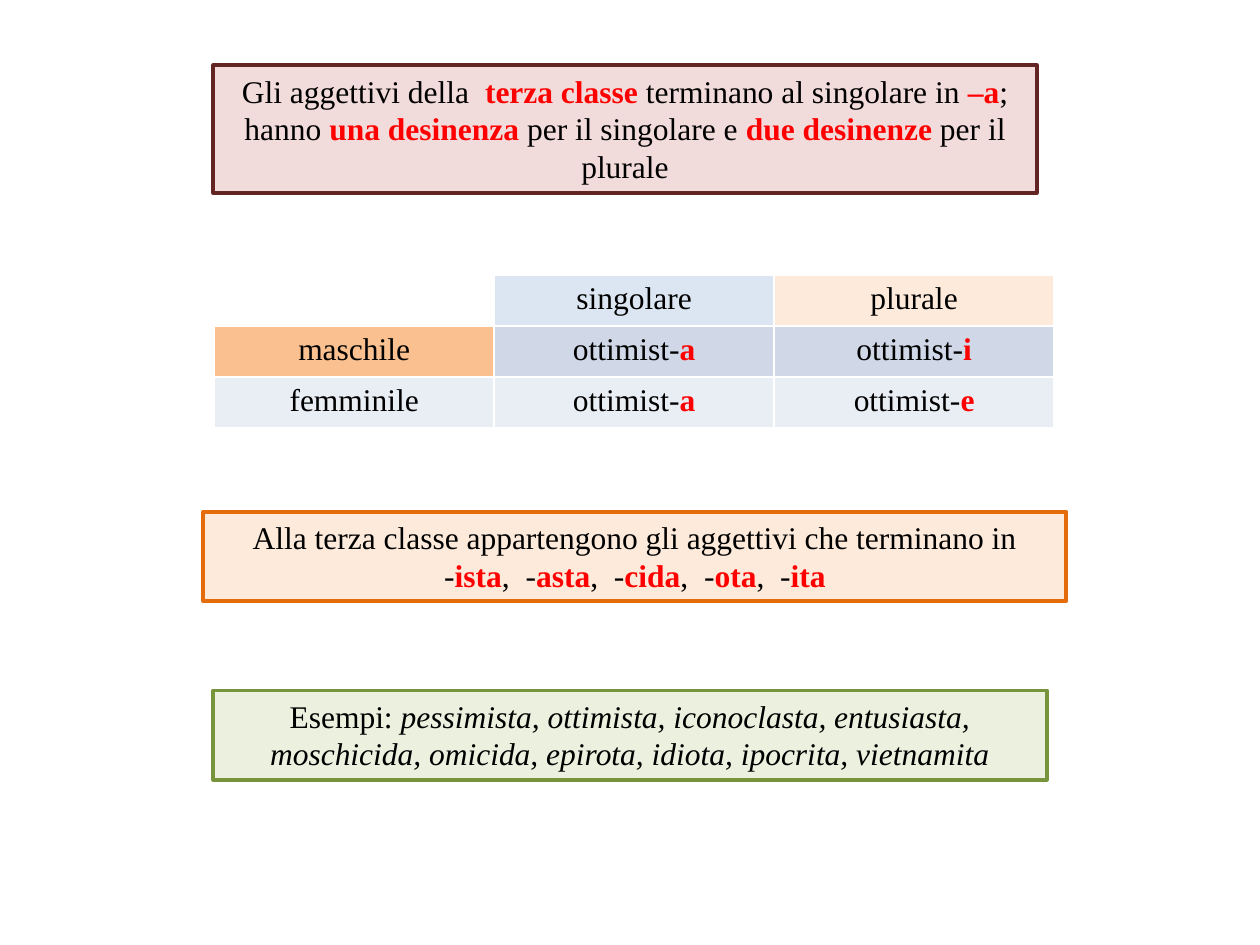
"""Build a slide on Italian adjectives of the third class."""
from pptx import Presentation
from pptx.dml.color import RGBColor
from pptx.enum.text import MSO_AUTO_SIZE, PP_ALIGN
from pptx.util import Cm, Pt

COLORS = {
    "text": "000000", "ending": "FF0000", "white": "FFFFFF",
    "rose": "F2DCDB", "maroon": "632523",
    "peach": "FDEADA", "orange": "E46C0A", "apricot": "FAC090",
    "mint": "EBF1DE", "green": "77933C",
    "sky": "DCE6F2", "band": "D0D8E8", "pale": "E9EDF4",
}


def rgb(name):
    return RGBColor.from_string(COLORS[name])


def write(tf, text, font="Times New Roman", size=18, align=PP_ALIGN.CENTER):
    """Write lines in which *stars* mark red bold and _underscores_ italic."""
    for i, line in enumerate(text.split("\n")):
        p = tf.paragraphs[0] if i == 0 else tf.add_paragraph()
        p.alignment = align
        for j, strong in enumerate(line.split("*")):
            for k, part in enumerate(strong.split("_")):
                if part:
                    r = p.add_run()
                    r.text = part
                    r.font.name = font
                    r.font.size = Pt(size)
                    r.font.bold = j % 2 == 1
                    r.font.italic = k % 2 == 1
                    r.font.color.rgb = rgb("ending" if j % 2 else "text")


prs = Presentation()
prs.slide_width, prs.slide_height = Cm(25.4), Cm(19.05)
s = prs.slides.add_slide(prs.slide_layouts[6])

boxes = [
    (4.3, 1.32, 16.6, 2.57, "rose", "maroon",
     "Gli aggettivi della  *terza classe* terminano al singolare in *–a*; hanno "
     "*una desinenza* per il singolare e *due desinenze* per il plurale"),
    (4.1, 10.32, 17.4, 1.8, "peach", "orange",
     "Alla terza classe appartengono gli aggettivi che terminano in\n"
     "-*ista*,  -*asta*,  -*cida*,  -*ota*,  -*ita*"),
    (4.3, 13.92, 16.8, 1.8, "mint", "green",
     "Esempi: _pessimista, ottimista, iconoclasta, entusiasta, moschicida, "
     "omicida, epirota, idiota, ipocrita, vietnamita_"),
]
for left, top, width, height, fill, line, text in boxes:
    sp = s.shapes.add_textbox(Cm(left), Cm(top), Cm(width), Cm(height))
    sp.fill.solid()
    sp.fill.fore_color.rgb = rgb(fill)
    sp.line.color.rgb = rgb(line)
    sp.line.width = Pt(2.25)
    tf = sp.text_frame
    tf.word_wrap = True
    tf.auto_size = MSO_AUTO_SIZE.SHAPE_TO_FIT_TEXT
    write(tf, text)

rows = [
    [("", "white"), ("singolare", "sky"), ("plurale", "peach")],
    [("maschile", "apricot"), ("ottimist-*a*", "band"), ("ottimist-*i*", "band")],
    [("femminile", "pale"), ("ottimist-*a*", "pale"), ("ottimist-*e*", "pale")],
]
table = s.shapes.add_table(3, 3, Cm(4.32), Cm(5.54), Cm(16.93), Cm(3.09)).table
for i, row in enumerate(rows):
    for j, (text, fill) in enumerate(row):
        cell = table.cell(i, j)
        cell.fill.solid()
        cell.fill.fore_color.rgb = rgb(fill)
        write(cell.text_frame, text)

prs.save("out.pptx")
